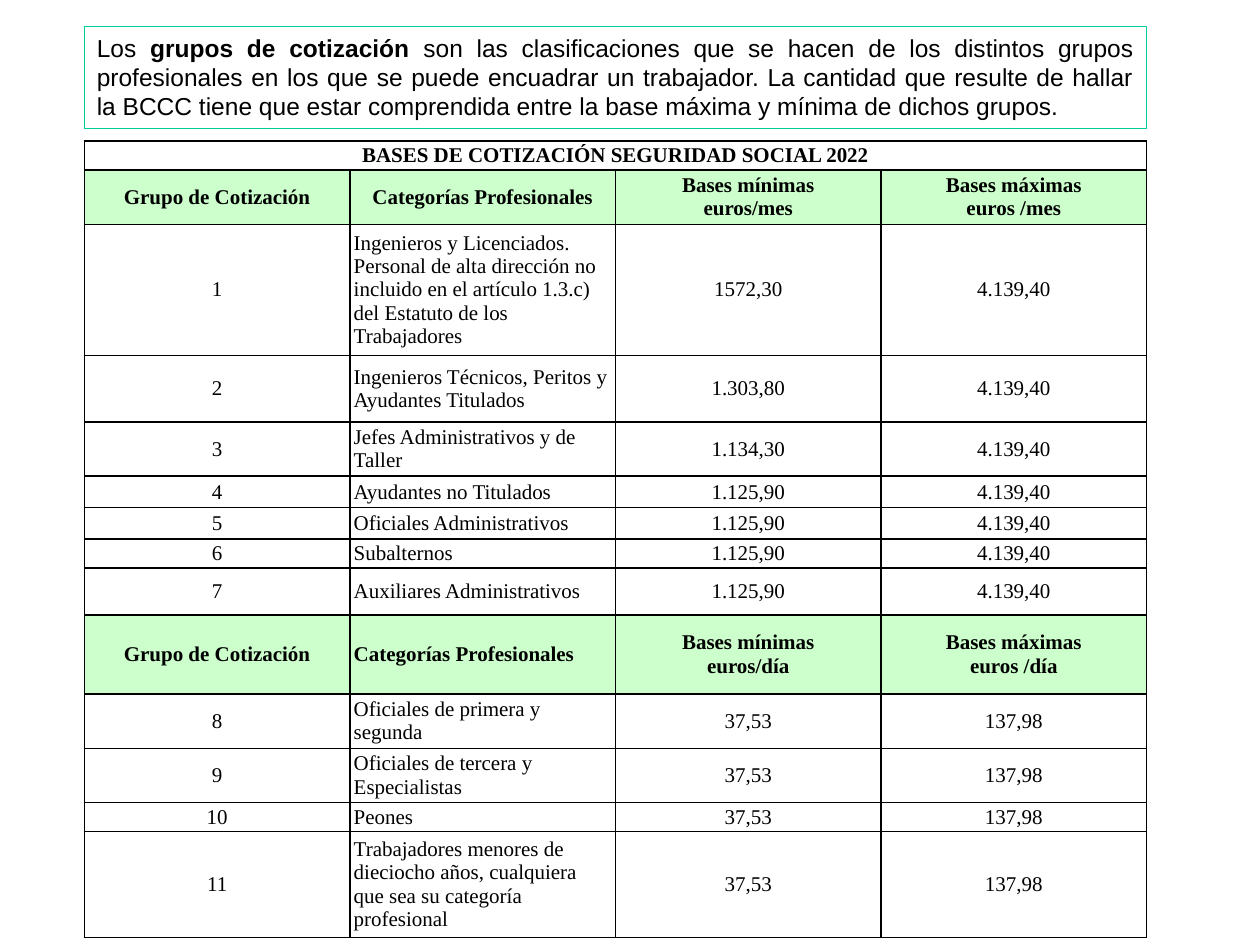
from lxml import etree
from pptx import Presentation
from pptx.dml.color import RGBColor
from pptx.enum import shapes, text
from pptx.oxml import ns
from pptx.util import Inches, Pt

BLACK, TEAL, GREEN = "000000", "00CC99", "CCFFCC"
CENTER, LEFT = text.PP_ALIGN.CENTER, text.PP_ALIGN.LEFT

TITLE = "BASES DE COTIZACIÓN SEGURIDAD SOCIAL 2022"
INTRO = [
    ("Los ", False),
    ("grupos de cotización ", True),
    ("son las clasificaciones que se hacen de los distintos grupos "
     "profesionales en los que se puede encuadrar un trabajador. La cantidad "
     "que resulte de hallar la BCCC tiene que estar comprendida entre la base "
     "máxima y mínima de dichos grupos.", False),
]
# Row height, professional category, minimum base
MONTHLY_GROUPS = [
    (1.04, "Ingenieros y Licenciados. Personal de alta dirección no incluido "
           "en el artículo 1.3.c) del Estatuto de los Trabajadores", "1572,30"),
    (0.53, "Ingenieros Técnicos, Peritos y Ayudantes Titulados", "1.303,80"),
    (0.43, "Jefes Administrativos y de Taller", "1.134,30"),
    (0.25, "Ayudantes no Titulados", "1.125,90"),
    (0.25, "Oficiales Administrativos", "1.125,90"),
    (0.23, "Subalternos", "1.125,90"),
    (0.37, "Auxiliares Administrativos", "1.125,90"),
]
DAILY_GROUPS = [
    (0.43, "Oficiales de primera y segunda", "37,53"),
    (0.43, "Oficiales de tercera y Especialistas", "37,53"),
    (0.23, "Peones", "37,53"),
    (0.84, "Trabajadores menores de dieciocho años, cualquiera que sea su "
           "categoría profesional", "37,53"),
]


def color(value):
    return RGBColor.from_string(value)


def write(frame, runs, *, font, size, align=LEFT):
    """Fill a text frame with (text, bold) runs; a line feed breaks the line."""
    paragraph = frame.paragraphs[0]
    paragraph.alignment = align
    for content, bold in runs:
        for index, line in enumerate(content.split("\n")):
            if index:
                paragraph.add_line_break()
            run = paragraph.add_run()
            run.text = line
            run.font.name = font
            run.font.size = Pt(size)
            run.font.bold = bold
            run.font.color.rgb = color(BLACK)


def set_borders(cell):
    properties = cell._tc.get_or_add_tcPr()
    for position, side in enumerate(("lnL", "lnR", "lnT", "lnB")):
        line = etree.Element(ns.qn(f"a:{side}"), w=str(Pt(1)))
        fill = etree.SubElement(line, ns.qn("a:solidFill"))
        etree.SubElement(fill, ns.qn("a:srgbClr"), val=BLACK)
        properties.insert(position, line)


def format_cell(cell, content, *, bold=False, align=CENTER, fill=None):
    cell.margin_left = cell.margin_right = Inches(0.03)
    cell.margin_top = cell.margin_bottom = Inches(0.02)
    cell.vertical_anchor = text.MSO_ANCHOR.MIDDLE
    if fill:
        cell.fill.solid()
        cell.fill.fore_color.rgb = color(fill)
    else:
        cell.fill.background()
    set_borders(cell)
    if content:
        write(cell.text_frame, [(content, bold)], font="Times New Roman",
              size=12, align=align)


def add_intro(slide, left, top, width, height):
    box = slide.shapes.add_shape(shapes.MSO_SHAPE.RECTANGLE,
                                 left, top, width, height)
    box.shadow.inherit = False
    box.fill.background()
    box.line.color.rgb = color(TEAL)
    box.line.width = Pt(0.75)
    box.text_frame.word_wrap = True
    box.text_frame.vertical_anchor = text.MSO_ANCHOR.TOP
    write(box.text_frame, INTRO, font="Arial", size=14,
          align=text.PP_ALIGN.JUSTIFY)


def section_rows(unit, header_height, category_align, groups, first, maximum):
    """Return (height, texts, category alignment, is header) for a section."""
    header = ("Grupo de Cotización", "Categorías Profesionales",
              f"Bases mínimas\neuros/{unit}", f"Bases máximas\neuros /{unit}")
    rows = [(header_height, header, category_align, True)]
    for number, (height, category, minimum) in enumerate(groups, first):
        rows.append((height, (str(number), category, minimum, maximum),
                     LEFT, False))
    return rows


def add_bases_table(slide, left, top, width):
    rows = [(0.23, (TITLE, "", "", ""), CENTER, True)]
    rows += section_rows("mes", 0.43, CENTER, MONTHLY_GROUPS, 1, "4.139,40")
    rows += section_rows("día", 0.63, LEFT, DAILY_GROUPS, 8, "137,98")
    height = Inches(sum(row[0] for row in rows))
    table = slide.shapes.add_table(len(rows), 4, left, top, width, height).table
    table.first_row = table.horz_banding = False
    for column in table.columns:
        column.width = width // 4
    for index, (row_height, texts, category_align, header) in enumerate(rows):
        table.rows[index].height = Inches(row_height)
        for position, content in enumerate(texts):
            format_cell(table.cell(index, position), content, bold=header,
                        align=category_align if position == 1 else CENTER,
                        fill=GREEN if header and index else None)
    table.cell(0, 0).merge(table.cell(0, 3))


def main():
    presentation = Presentation()
    presentation.slide_width, presentation.slide_height = Inches(10), Inches(7.5)
    slide = presentation.slides.add_slide(presentation.slide_layouts[6])
    left, width = Inches(0.67), Inches(8.43)
    add_intro(slide, left, Inches(0.21), width, Inches(0.81))
    add_bases_table(slide, left, Inches(1.12), width)
    presentation.save("out.pptx")


if __name__ == "__main__":
    main()
